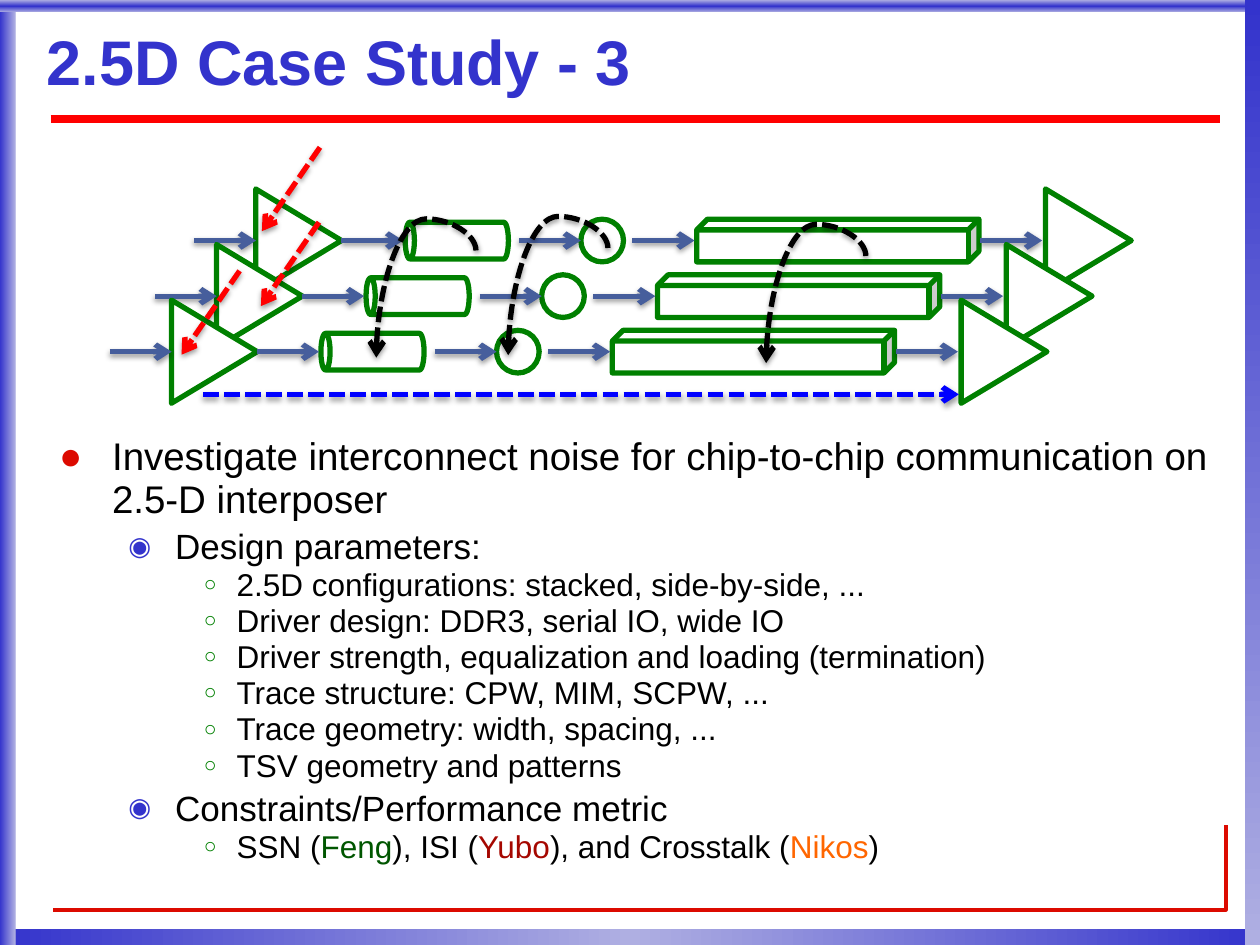
from lxml.etree import SubElement
from pptx import Presentation
from pptx.dml.color import RGBColor
from pptx.enum.dml import MSO_LINE_DASH_STYLE as Dash
from pptx.enum.shapes import MSO_CONNECTOR as Link, MSO_SHAPE as Shape
from pptx.enum.text import MSO_ANCHOR as Anchor, MSO_AUTO_SIZE as AutoSize
from pptx.oxml.ns import qn
from pptx.util import Cm, Pt

THEME = {
    "font": "Arial", "title_size": 36, "title": "3333CC", "text": "000000",
    "frame": "3333CC", "frame_light": "AFAFE2", "rule": "FF0000", "corner": "DC0A00",
    "part_fill": "FFFFFF", "part_line": "008000", "signal": "465E9C",
    "noise": "FF0000", "coupling": "000000", "path": "0000FF", "stroke": 3,
}
# Per outline level: size, line spacing, space before (pt), left and hanging indent (cm), bullet
LEVELS = [
    dict(size=22, spacing=0.93, before=0, left=1.07, hang=1.07, bullet="●", color="DC0A00", scale=100),
    dict(size=20, spacing=0.87, before=5, left=2.34, hang=0.94, bullet="◉", color="3333CC", scale=75),
    dict(size=18, spacing=0.87, before=1.8, left=3.58, hang=0.66, bullet="○", color="008000", scale=68),
]
TITLE = "2.5D Case Study - 3"
OUTLINE = [  # level, runs; a run is text or (text, colour)
    (0, ["Investigate interconnect noise for chip-to-chip communication on 2.5-D interposer"]),
    (1, ["Design parameters:"]),
    (2, ["2.5D configurations: stacked, side-by-side, ..."]),
    (2, ["Driver design: DDR3, serial IO, wide IO"]),
    (2, ["Driver strength, equalization and loading (termination)"]),
    (2, ["Trace structure: CPW, MIM, SCPW, ..."]),
    (2, ["Trace geometry: width, spacing, ..."]),
    (2, ["TSV geometry and patterns"]),
    (1, ["Constraints/Performance metric"]),
    (2, ["SSN (", ("Feng", "005600"), "), ISI (", ("Yubo", "A50700"),
         "), and Crosstalk (", ("Nikos", "FF6600"), ")"]),
]
DARK, LIGHT = THEME["frame"], THEME["frame_light"]
FRAME_BARS = [  # left, top, width, height, gradient colours, angle
    (0, 18.73, 25.4, 0.32, (DARK, LIGHT, DARK), 0),
    (0, 0, 0.31, 19.05, (DARK, LIGHT), 0),
    (0, 0, 25.4, 0.25, (LIGHT, DARK, LIGHT), 90),
    (25.09, 0, 0.31, 19.05, (DARK, LIGHT), 90),
]
# Channel parts of the front row: preset, centre x, width, height, rotation (cm, degrees)
CHANNEL = [
    (Shape.ISOSCELES_TRIANGLE, 4.32, 2.08, 1.73, 90),
    (Shape.CAN, 7.51, 0.74, 2.08, 270),
    (Shape.CUBE, 15.19, 5.69, 0.86, 0),
    (Shape.OVAL, 10.44, 0.86, 0.86, 0),
    (Shape.ISOSCELES_TRIANGLE, 20.24, 2.08, 1.73, 90),
]
SIGNAL_STARTS, SIGNAL_LENGTH = [5.18, 8.76, 11.05, 18.06, 2.21], 1.25
ROWS = [(1.7, 4.85), (0.91, 5.97), (0, 7.09)]  # shift right, centre y; back to front
NOISE_STARTS, NOISE_STEP = [(6.45, 2.97), (6.43, 4.48), (4.83, 5.46)], (-1.17, 1.69)
COUPLING_CENTRES = [(16.45, 6.24), (11.25, 6.08), (8.59, 6.13)]
COUPLING_SIZE, COUPLING_BULGE = (2.16, 2.01), -29500
DRIVER_TO_RECEIVER = (4.09, 7.95, 19.33, 7.95)


def rgb(color):
    return RGBColor.from_string(color)


def add_xml(parent, tag, **attributes):
    return SubElement(parent, qn(tag), {key: str(value) for key, value in attributes.items()})


def add_shadow(properties, alpha, blur, distance, angle, color="000000"):
    effects = add_xml(properties, "a:effectLst")
    shadow = add_xml(effects, "a:outerShdw", blurRad=Pt(blur), dist=Pt(distance),
                     dir=angle * 60000, algn="ctr", rotWithShape=0)
    add_xml(add_xml(shadow, "a:srgbClr", val=color), "a:alpha", val=alpha * 1000)


def add_bar(slide, left, top, width, height, colors, angle):
    bar = slide.shapes.add_shape(Shape.RECTANGLE, Cm(left), Cm(top), Cm(width), Cm(height))
    bar.shadow.inherit = False
    bar.line.fill.background()
    gradient = add_xml(bar._element.spPr, "a:gradFill", rotWithShape=1)
    stops = add_xml(gradient, "a:gsLst")
    for index, color in enumerate(colors):
        stop = add_xml(stops, "a:gs", pos=100000 * index // (len(colors) - 1))
        add_xml(stop, "a:srgbClr", val=color)
    add_xml(gradient, "a:lin", ang=angle * 60000, scaled=0)
    bar._element.spPr.find(qn("a:prstGeom")).addnext(gradient)


def add_part(slide, preset, x, y, width, height, rotation):
    """Place one channel part centred on x, y."""
    part = slide.shapes.add_shape(preset, Cm(x - width / 2), Cm(y - height / 2), Cm(width), Cm(height))
    part.rotation = rotation
    part.shadow.inherit = False
    part.fill.solid()
    part.fill.fore_color.rgb = rgb(THEME["part_fill"])
    part.line.color.rgb = rgb(THEME["part_line"])
    part.line.width = Pt(THEME["stroke"])


def add_arrow(slide, x1, y1, x2, y2, color, dashed=False, kind=Link.STRAIGHT):
    arrow = slide.shapes.add_connector(kind, Cm(x1), Cm(y1), Cm(x2), Cm(y2))
    arrow.line.color.rgb = rgb(color)
    arrow.line.width = Pt(THEME["stroke"])
    if dashed:
        arrow.line.dash_style = Dash.SQUARE_DOT
        # SQUARE_DOT is the preset "sysDot"; the longer system dash has no enum member
        arrow.line._ln.find(qn("a:prstDash")).set("val", "sysDash")
    add_xml(arrow.line._ln, "a:tailEnd", type="arrow")
    add_shadow(arrow._element.spPr, 38, 3.1, 1.6, 90)
    return arrow


def add_coupling(slide, x, y):
    """Arch from a back row over to a front row: an S-connector turned upright."""
    width, height = COUPLING_SIZE
    arch = add_arrow(slide, x - width / 2, y - height / 2, x + width / 2, y + height / 2,
                     THEME["coupling"], True, Link.CURVE)
    properties = arch._element.spPr
    properties.find(qn("a:xfrm")).set("rot", str(90 * 60000))
    geometry = properties.find(qn("a:prstGeom"))
    guides = geometry.find(qn("a:avLst"))
    if guides is None:
        guides = add_xml(geometry, "a:avLst")
    add_xml(guides, "a:gd", name="adj1", fmla=f"val {COUPLING_BULGE}")


def add_run(paragraph, text, size, color, bold=False):
    run = paragraph.add_run()
    run.text = text
    run.font.name, run.font.size, run.font.bold = THEME["font"], Pt(size), bold
    run.font.color.rgb = rgb(color)
    return run


def place(holder, left, top, width, height, margins, anchor):
    holder.left, holder.top, holder.width, holder.height = map(Cm, (left, top, width, height))
    frame = holder.text_frame
    frame.word_wrap, frame.auto_size, frame.vertical_anchor = True, AutoSize.NONE, anchor
    frame.margin_left = frame.margin_right = Cm(margins[0])
    frame.margin_top = frame.margin_bottom = Cm(margins[1])
    return frame


def write_title(slide):
    frame = place(slide.shapes.title, 0.94, 0.38, 23.62, 1.88, (0, 0), Anchor.MIDDLE)
    heading = frame.paragraphs[0]
    heading.alignment = 1
    heading.line_spacing = 0.87
    run = add_run(heading, TITLE, THEME["title_size"], THEME["title"], True)
    effects_host = run.font._element
    add_shadow(effects_host, 50, 0, 2.5, 45)
    effects_host.find(qn("a:solidFill")).addnext(effects_host.find(qn("a:effectLst")))


def write_outline(slide):
    frame = place(slide.placeholders[1], 0.94, 8.66, 23.93, 9.68, (0.25, 0.13), Anchor.TOP)
    for index, (level, runs) in enumerate(OUTLINE):
        style = LEVELS[level]
        item = frame.add_paragraph() if index else frame.paragraphs[0]
        item.level, item.line_spacing = level, style["spacing"]
        item.space_before, item.space_after = Pt(style["before"]), Pt(0)
        properties = item._p.get_or_add_pPr()
        properties.set("marL", str(Cm(style["left"])))
        properties.set("indent", str(-Cm(style["hang"])))
        add_xml(add_xml(properties, "a:buClr"), "a:srgbClr", val=style["color"])
        add_xml(properties, "a:buSzPct", val=style["scale"] * 1000)
        add_xml(properties, "a:buChar", char=style["bullet"])
        for run in runs:
            text, color = (run, THEME["text"]) if isinstance(run, str) else run
            add_run(item, text, style["size"], color)


def draw_frame(slide):
    for bar in FRAME_BARS:
        add_bar(slide, *bar)
    rule = slide.shapes.add_connector(Link.STRAIGHT, Cm(1.02), Cm(2.39), Cm(24.59), Cm(2.39))
    rule.line.color.rgb, rule.line.width = rgb(THEME["rule"]), Pt(4.5)
    add_xml(rule._element.spPr, "a:effectLst")
    outline = slide.shapes.build_freeform(Cm(24.71), Cm(16.64))
    outline.add_line_segments([(Cm(24.71), Cm(18.34)), (Cm(1.07), Cm(18.34))], close=False)
    corner = outline.convert_to_shape()
    corner.shadow.inherit = False
    corner.fill.background()
    corner.line.color.rgb, corner.line.width = rgb(THEME["corner"]), Pt(2.25)


def draw_channels(slide):
    for shift, y in ROWS:
        for preset, x, width, height, rotation in CHANNEL:
            add_part(slide, preset, x + shift, y, width, height, rotation)
        for start in SIGNAL_STARTS:
            x = start + shift
            add_arrow(slide, x, y, x + SIGNAL_LENGTH, y, THEME["signal"])
    for centre in COUPLING_CENTRES:
        add_coupling(slide, *centre)
    for x, y in NOISE_STARTS:
        add_arrow(slide, x, y, x + NOISE_STEP[0], y + NOISE_STEP[1], THEME["noise"], True)
    add_arrow(slide, *DRIVER_TO_RECEIVER, THEME["path"], True)


def main():
    deck = Presentation()
    deck.slide_width, deck.slide_height = Cm(25.4), Cm(19.05)
    slide = deck.slides.add_slide(deck.slide_layouts[1])
    draw_frame(slide)
    draw_channels(slide)
    write_title(slide)
    write_outline(slide)
    deck.save("out.pptx")


if __name__ == "__main__":
    main()
